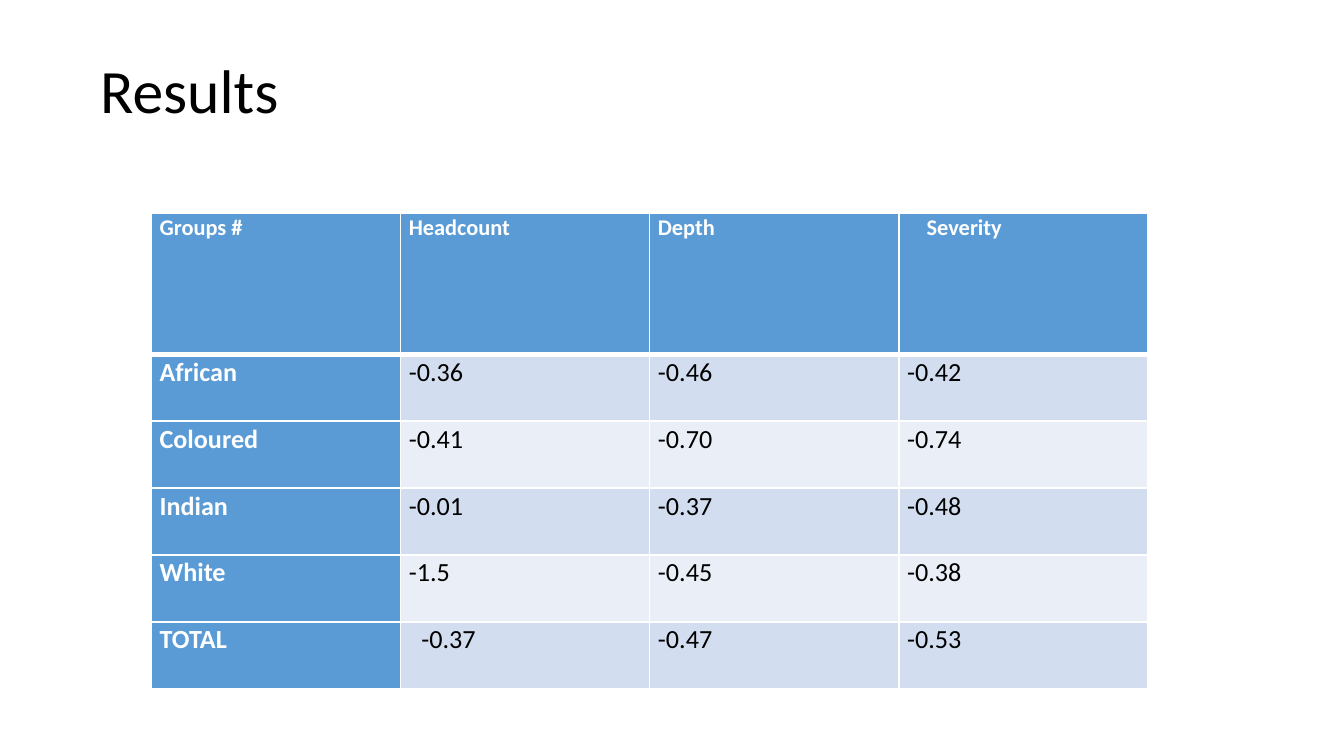
import pptx
import pptx.dml.color
import pptx.enum.text
import pptx.oxml
import pptx.oxml.ns
import pptx.util

PX = 9525  # 96 px to the inch
FONT = "Calibri"
WHITE, BLACK, BLUE = "FFFFFF", "000000", "5B9BD5"
BANDS = ["D2DEEF", "EAEFF7"]
ROWS = [
    ["Groups #", "Headcount", "Depth", "Severity"],
    ["African", "-0.36", "-0.46", "-0.42"],
    ["Coloured", "-0.41", "-0.70", "-0.74"],
    ["Indian", "-0.01", "-0.37", "-0.48"],
    ["White", "-1.5", "-0.45", "-0.38"],
    ["TOTAL", "-0.37", "-0.47", "-0.53"],
]
INDENTS = {(0, 3): 14, (5, 1): 9}  # (row, column): px


def px(length):
    return pptx.util.Emu(length * PX)


def color(value):
    return pptx.dml.color.RGBColor.from_string(value)


def format_text(para, size, value, bold, spacing):
    para.line_spacing = spacing
    for span in para.runs:
        span.font.name = FONT
        span.font.size = pptx.util.Pt(size)
        span.font.bold = bold
        span.font.color.rgb = color(value)


def add_borders(cell, widths):
    properties = cell._tc.get_or_add_tcPr()
    for side, width in widths.items():
        properties.append(pptx.oxml.parse_xml(
            f'<a:ln{side} {pptx.oxml.ns.nsdecls("a")} w="{pptx.util.Pt(width)}">'
            f'<a:solidFill><a:srgbClr val="{WHITE}"/></a:solidFill></a:ln{side}>'))


def format_cell(cell, row, column):
    heading = row == 0 or column == 0
    # Borders come before the fill in the cell properties
    add_borders(cell, {"L": 1, "R": 1, "T": 3 if row == 1 else 1, "B": 3 if row == 0 else 1})
    cell.fill.solid()
    cell.fill.fore_color.rgb = color(BLUE if heading else BANDS[(row - 1) % 2])
    cell.margin_left = cell.margin_right = px(6)
    cell.margin_top = cell.margin_bottom = 0
    cell.text_frame.text = ROWS[row][column]
    para = cell.text_frame.paragraphs[0]
    para.space_after = pptx.util.Pt(8)
    format_text(para, 12 if row == 0 else 14, WHITE if heading else BLACK, heading, 1.07)
    if (row, column) in INDENTS:
        para._p.get_or_add_pPr().set("marL", str(px(INDENTS[row, column])))


def add_title(page, left, top, width, height):
    box = page.shapes.title
    box.left, box.top, box.width, box.height = map(px, (left, top, width, height))
    box.text_frame.text = "Results"
    box.text_frame.vertical_anchor = pptx.enum.text.MSO_ANCHOR.MIDDLE
    para = box.text_frame.paragraphs[0]
    para.alignment = pptx.enum.text.PP_ALIGN.LEFT
    format_text(para, 33, BLACK, False, 0.9)


def add_results(page, left, top, width, height, header_height):
    table = page.shapes.add_table(
        len(ROWS), len(ROWS[0]), px(left), px(top), px(width), px(height)).table
    # Equal columns; the body rows share what the header leaves
    for column in table.columns:
        column.width = px(width) // len(ROWS[0])
    for row in table.rows:
        row.height = px(height - header_height) // (len(ROWS) - 1)
    table.rows[0].height = px(header_height)
    for row, texts in enumerate(ROWS):
        for column in range(len(texts)):
            format_cell(table.cell(row, column), row, column)


def main():
    deck = pptx.Presentation()
    deck.slide_width, deck.slide_height = px(960), px(540)
    page = deck.slides.add_slide(deck.slide_layouts[5])  # title only
    add_title(page, 62, 29, 828, 76)
    add_results(page, 108, 152, 712, 340, 101)
    deck.save("out.pptx")


if __name__ == "__main__":
    main()
